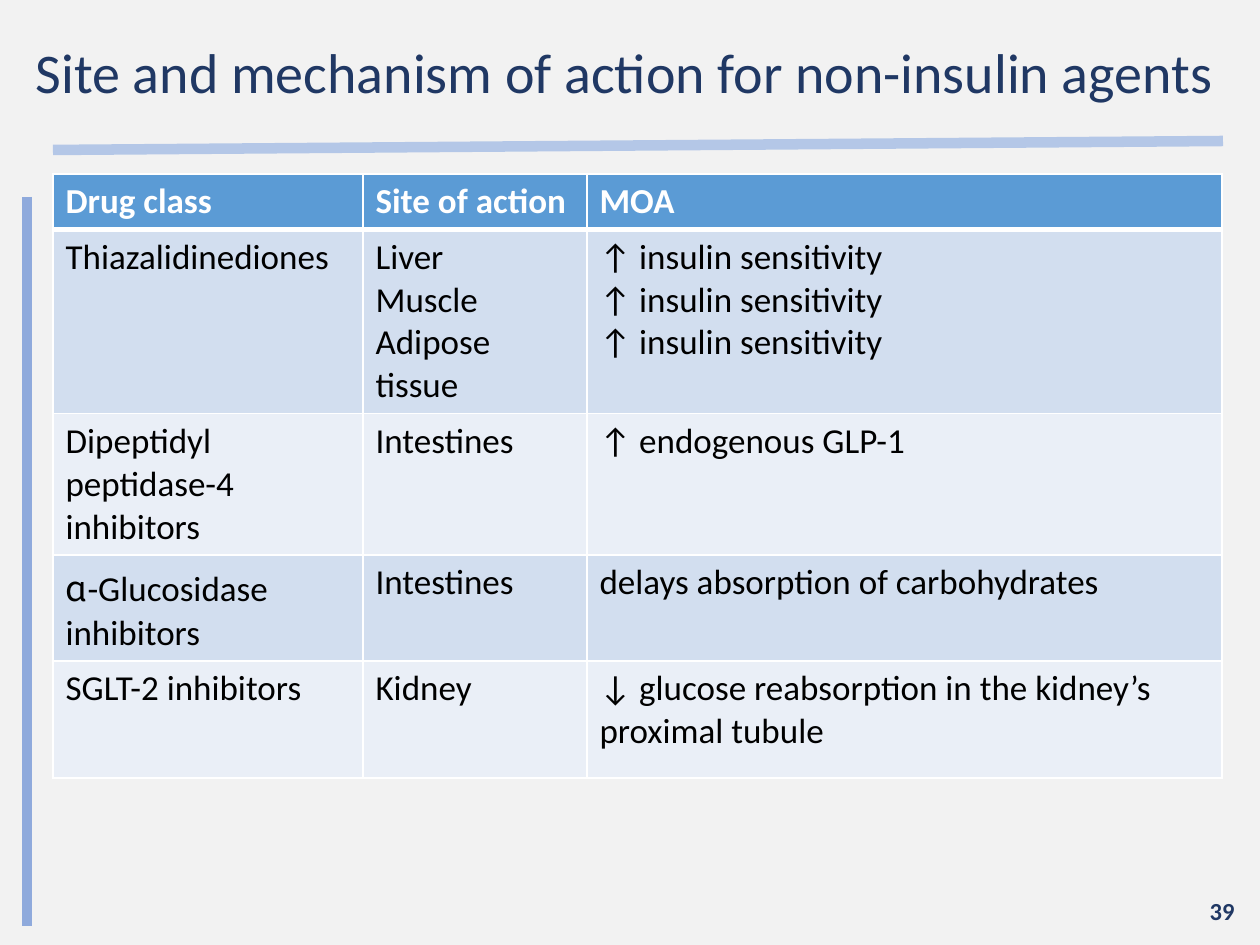
from lxml.etree import SubElement
from pptx import Presentation
from pptx.dml.color import RGBColor
from pptx.enum.shapes import MSO_CONNECTOR
from pptx.enum.text import MSO_ANCHOR, MSO_AUTO_SIZE, PP_ALIGN
from pptx.oxml.ns import qn
from pptx.util import Pt

SCALE = 914400 / 126
FONT = "Calibri"
ALPHA = "Noto Sans CJK SC"
PAPER = RGBColor(0xF2, 0xF2, 0xF2)
NAVY = RGBColor(0x20, 0x38, 0x64)
PALE = RGBColor(0xB4, 0xC7, 0xE7)
MID = RGBColor(0x8F, 0xAA, 0xDC)
HEAD = RGBColor(0x5B, 0x9B, 0xD5)
BANDS = [RGBColor(0xEA, 0xEF, 0xF7), RGBColor(0xD2, 0xDE, 0xEF)]
WHITE = RGBColor(0xFF, 0xFF, 0xFF)
BLACK = RGBColor(0, 0, 0)

COLS = [310, 224, 635]
ROWS = [
    (54, ["Drug class", "Site of action", "MOA"]),
    (184, ["Thiazalidinediones", "Liver\nMuscle\nAdipose tissue",
           "\n".join(["↑ insulin sensitivity"] * 3)]),
    (141, ["Dipeptidyl\npeptidase-4\ninhibitors", "Intestines",
           "↑ endogenous GLP-1"]),
    (106, ["ɑ-Glucosidase\ninhibitors", "Intestines",
           "delays absorption of carbohydrates"]),
    (117, ["SGLT-2 inhibitors", "Kidney",
           "↓ glucose reabsorption in the kidney’s proximal tubule"]),
]


def px(num):
    """Turn px into EMU."""
    return round(num * SCALE)


def style(font, size, color, bold=False):
    """Set the look of a font."""
    font.name = FONT
    font.size = Pt(size)
    font.bold = bold
    font.color.rgb = color


def place(shape, left, top, width, height):
    """Move and size a shape."""
    shape.left, shape.top = px(left), px(top)
    shape.width, shape.height = px(width), px(height)


def add_title(slide, text):
    """Fill and format the title placeholder."""
    title = slide.shapes.title
    place(title, 23, -5, 1237, 161)
    frame = title.text_frame
    frame.text = text
    frame.word_wrap = True
    frame.auto_size = MSO_AUTO_SIZE.NONE
    frame.vertical_anchor = MSO_ANCHOR.MIDDLE
    para = frame.paragraphs[0]
    para.alignment = PP_ALIGN.LEFT
    para.line_spacing = 0.9
    style(para.font, 32, NAVY)


def add_rule(slide, start, end, color):
    """Draw a thick plain line."""
    rule = slide.shapes.add_connector(
        MSO_CONNECTOR.STRAIGHT, *map(px, start + end))
    rule.line.color.rgb = color
    rule.line.width = Pt(6)
    SubElement(rule._element.spPr, qn("a:effectLst"))


def add_edges(cell, base):
    """Give a cell white borders, with its own bottom and top widths."""
    props = cell._tc.get_or_add_tcPr()
    for side, width in zip("LRTB", (1, 1, *base)):
        edge = SubElement(props, qn(f"a:ln{side}"), w=str(Pt(width)))
        fill = SubElement(edge, qn("a:solidFill"))
        SubElement(fill, qn("a:srgbClr"), val=str(WHITE))


def fill_cell(cell, text, row):
    """Write and format one table cell."""
    add_edges(cell, [(1, 3), (3, 1)][row] if row < 2 else (1, 1))
    cell.fill.solid()
    cell.fill.fore_color.rgb = BANDS[row % 2] if row else HEAD
    cell.text = text
    for para in cell.text_frame.paragraphs:
        if para.text.startswith("ɑ"):
            rest = para.text[1:]
            para.runs[0].text = "ɑ"
            para.runs[0].font.name = ALPHA
            para.add_run().text = rest
        style(para.font, 20, BLACK if row else WHITE, row == 0)


def add_grid(slide):
    """Build the drug table."""
    high = sum(size for size, _ in ROWS)
    grid = slide.shapes.add_table(
        len(ROWS), len(COLS), px(53), px(174), px(sum(COLS)), px(high)).table
    for col, width in zip(grid.columns, COLS):
        col.width = px(width)
    for row, (size, texts) in enumerate(ROWS):
        grid.rows[row].height = px(size)
        for col, text in enumerate(texts):
            fill_cell(grid.cell(row, col), text, row)


def add_number(slide, text):
    """Add the page number."""
    box = slide.shapes.add_textbox(px(964), px(886), px(283), px(50))
    frame = box.text_frame
    frame.word_wrap = True
    frame.vertical_anchor = MSO_ANCHOR.MIDDLE
    frame.text = text
    para = frame.paragraphs[0]
    para.alignment = PP_ALIGN.RIGHT
    style(para.font, 14, NAVY, True)


def main():
    """Build and save the slide."""
    deck = Presentation()
    deck.slide_width, deck.slide_height = px(1260), px(945)
    slide = deck.slides.add_slide(deck.slide_layouts[5])
    slide.background.fill.solid()
    slide.background.fill.fore_color.rgb = PAPER
    add_rule(slide, (53, 150), (1223, 141), PALE)
    add_rule(slide, (27, 197), (27, 926), MID)
    add_title(slide, "Site and mechanism of action for non-insulin agents")
    add_grid(slide)
    add_number(slide, "39")
    deck.save("out.pptx")


if __name__ == "__main__":
    main()
